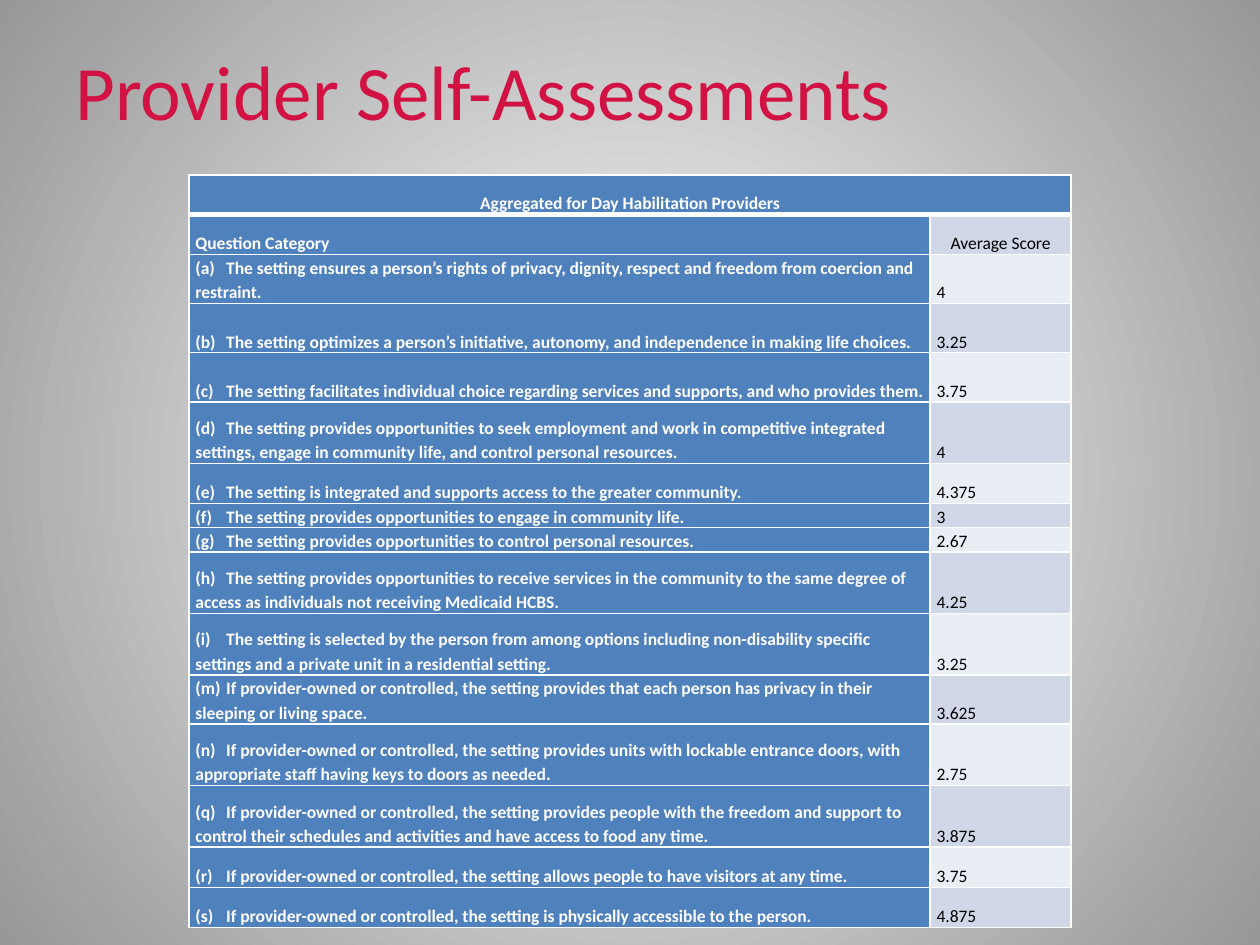
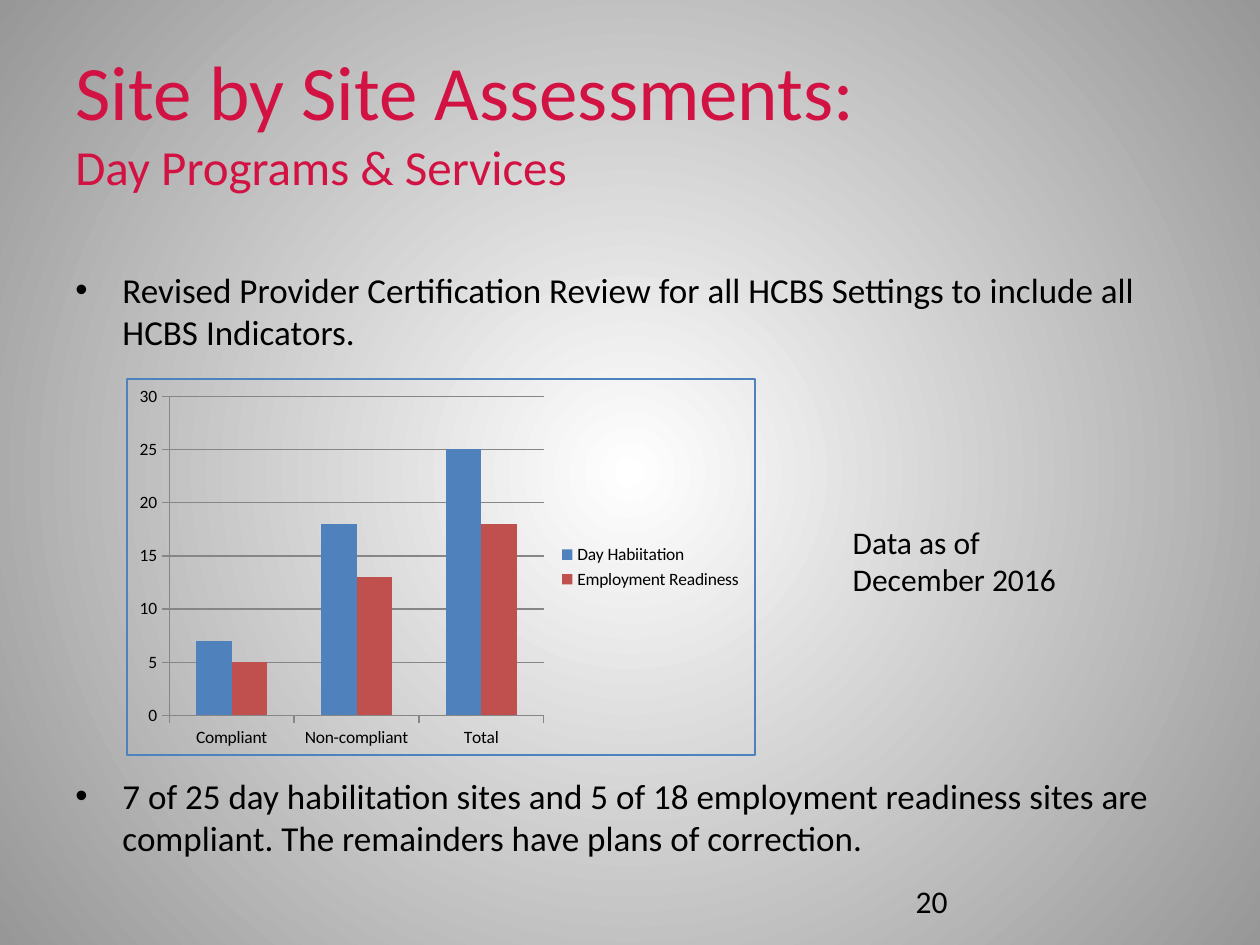
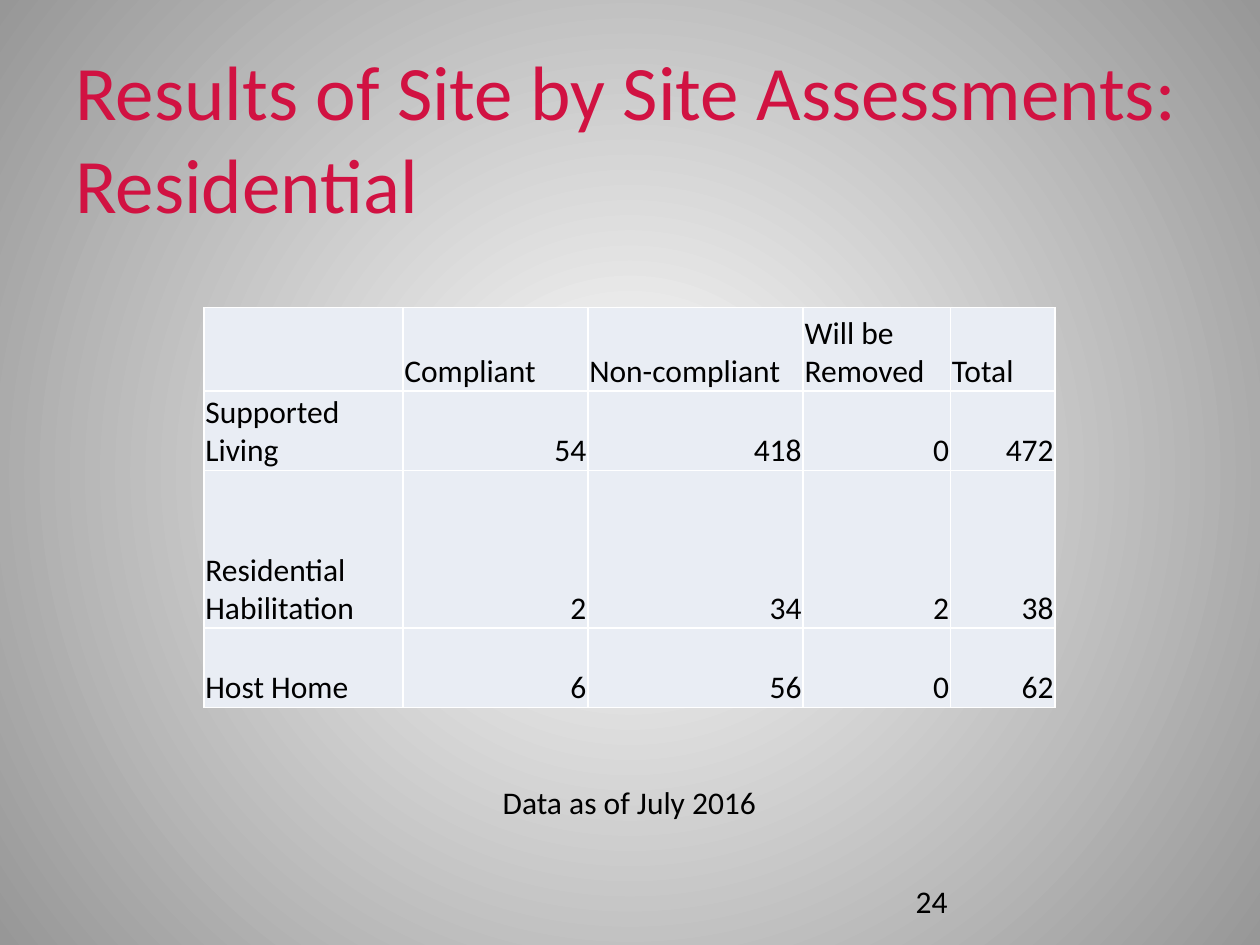
from lxml.etree import SubElement
from pptx import Presentation
from pptx.chart.data import CategoryChartData
from pptx.dml.color import RGBColor
from pptx.enum.chart import XL_CHART_TYPE, XL_LEGEND_POSITION, XL_TICK_MARK
from pptx.enum.text import MSO_ANCHOR, PP_ALIGN
from pptx.oxml import parse_xml
from pptx.oxml.ns import nsdecls, qn
from pptx.util import Cm, Pt

RED = RGBColor(0xD1, 0x12, 0x42)
BLUE = RGBColor(0x4F, 0x81, 0xBD)
BRICK = RGBColor(0xC0, 0x50, 0x4D)
BAND = RGBColor(0xD0, 0xD8, 0xE8)
PALE = RGBColor(0xE9, 0xED, 0xF4)
GREY = RGBColor(0x97, 0x97, 0x97)
RULE = RGBColor(0x86, 0x86, 0x86)
WHITE = RGBColor(0xFF, 0xFF, 0xFF)
BLACK = RGBColor(0, 0, 0)

FACE = "Calibri"
TITLE = (1.27, 0.76, 22.86, 3.18)
FOOT = (18.21, 17.65, 5.92, 1.02)

# Row height in cm, category, average score
SCORES = [
    (0.99, "(a)\tThe setting ensures a person’s rights of privacy, dignity, respect "
           "and freedom from coercion and restraint.", "4"),
    (0.99, "(b)\tThe setting optimizes a person’s initiative, autonomy, and "
           "independence in making life choices.", "3.25"),
    (0.99, "(c)\tThe setting facilitates individual choice regarding services and "
           "supports, and who provides them.", "3.75"),
    (1.24, "(d)\tThe setting provides opportunities to seek employment and work in "
           "competitive integrated settings, engage in community life, and control "
           "personal resources.", "4"),
    (0.81, "(e)\tThe setting is integrated and supports access to the greater "
           "community.", "4.375"),
    (0.48, "(f)\tThe setting provides opportunities to engage in community life.", "3"),
    (0.48, "(g)\tThe setting provides opportunities to control personal resources.",
     "2.67"),
    (1.24, "(h)\tThe setting provides opportunities to receive services in the "
           "community to the same degree of access as individuals not receiving "
           "Medicaid HCBS.", "4.25"),
    (1.24, "(i)\tThe setting is selected by the person from among options including "
           "non-disability specific settings and a private unit in a residential "
           "setting.", "3.25"),
    (0.99, "(m)\tIf provider-owned or controlled, the setting provides that each "
           "person has privacy in their sleeping or living space.", "3.625"),
    (1.24, "(n)\tIf provider-owned or controlled, the setting provides units with "
           "lockable entrance doors, with appropriate staff having keys to doors as "
           "needed.", "2.75"),
    (1.24, "(q)\tIf provider-owned or controlled, the setting provides people with "
           "the freedom and support to control their schedules and activities and "
           "have access to food any time.", "3.875"),
    (0.81, "(r)\tIf provider-owned or controlled, the setting allows people to have "
           "visitors at any time.", "3.75"),
    (0.81, "(s)\tIf provider-owned or controlled, the setting is physically "
           "accessible to the person.", "4.875"),
]

SITES = [
    ("", "Compliant", "Non-compliant", "Will be Removed", "Total"),
    ("Supported Living", "54", "418", "0", "472"),
    ("Residential Habilitation", "2", "34", "2", "38"),
    ("Host Home", "6", "56", "0", "62"),
]


def apply(item, form):
    for key, val in form.items():
        setattr(item, key, val)


def style(font, size, color=BLACK, bold=False):
    apply(font, {"name": FACE, "size": Pt(size), "bold": bold})
    font.color.rgb = color


def add_text(slide, box, text, size=18, color=BLACK, align=None):
    frame = slide.shapes.add_textbox(*map(Cm, box)).text_frame
    frame.word_wrap = True
    para = frame.paragraphs[0]
    para.alignment = align
    run = para.add_run()
    run.text = text
    style(run.font, size, color)
    return frame


def add_title(slide, text, small=None):
    para = add_text(slide, TITLE, text, 44, RED).paragraphs[0]
    if small:
        para.add_line_break()
        run = para.add_run()
        run.text = small
        style(run.font, 28, RED)


def add_list(slide, box, items, top, gap):
    """Bulleted items, the first one `top` cm down, the rest `gap` points apart."""
    frame = slide.shapes.add_textbox(*map(Cm, box)).text_frame
    apply(frame, {"word_wrap": True, "margin_top": Cm(top)})
    for num, item in enumerate(items):
        para = frame.add_paragraph() if num else frame.paragraphs[0]
        if num:
            para.space_before = Pt(gap)
        props = para._p.get_or_add_pPr()
        props.set("marL", str(Cm(0.95)))
        props.set("indent", str(-Cm(0.95)))
        SubElement(props, qn("a:buFont"), typeface="Arial")
        SubElement(props, qn("a:buChar"), char="•")
        run = para.add_run()
        run.text = item
        style(run.font, 20)


def add_grid(slide, spot, cols, rows):
    size = Cm(sum(cols)), Cm(sum(rows))
    grid = slide.shapes.add_table(
        len(rows), len(cols), *map(Cm, spot), *size).table
    for col, wide in zip(grid.columns, cols):
        col.width = Cm(wide)
    for row, high in zip(grid.rows, rows):
        row.height = Cm(high)
    return grid


def set_cell(cell, text, fill, form, size, color=BLACK, bold=False,
             align=None, space=None, edges=None):
    # Borders come before the fill
    props = cell._tc.get_or_add_tcPr()
    for side in "LRTB":
        wide = Pt((edges or {}).get(side, 1))
        props.append(parse_xml(
            f'<a:ln{side} {nsdecls("a")} w="{wide}"><a:solidFill>'
            f'<a:srgbClr val="{WHITE}"/></a:solidFill></a:ln{side}>'))
    cell.fill.solid()
    cell.fill.fore_color.rgb = fill
    apply(cell, form)
    para = cell.text_frame.paragraphs[0]
    apply(para, {"alignment": align, "line_spacing": space})
    if "\t" in text:
        tabs = SubElement(para._p.get_or_add_pPr(), qn("a:tabLst"))
        SubElement(tabs, qn("a:tab"), pos=str(Cm(0.62)), algn="l")
    if text:
        run = para.add_run()
        run.text = text
        style(run.font, size, color, bold)
    else:
        style(para.font, size)


def score_grid(slide, spot):
    form = {"vertical_anchor": MSO_ANCHOR.BOTTOM, "margin_left": Cm(0.13),
            "margin_right": Cm(0.13), "margin_top": 0, "margin_bottom": 0}
    lines = [(0.79, "Aggregated for Day Habilitation Providers", ""),
             (0.81, "Question Category", "Average Score")] + SCORES
    grid = add_grid(slide, spot, (14.94, 2.84), [line[0] for line in lines])
    for num, (_, name, score) in enumerate(lines):
        head = num == 0
        edges = {0: {"B": 3}, 1: {"T": 3}}.get(num)
        set_cell(grid.cell(num, 0), name, BLUE, form, 10, WHITE, True,
                 PP_ALIGN.CENTER if head else None, 1.15, edges)
        fill = BLUE if head else BAND if num % 2 else PALE
        set_cell(grid.cell(num, 1), score, fill, form, 10, BLACK, False,
                 PP_ALIGN.CENTER if num == 1 else None, 1.15, edges)
    grid.cell(0, 0).merge(grid.cell(0, 1))


def site_grid(slide, spot):
    form = {"vertical_anchor": MSO_ANCHOR.BOTTOM, "margin_left": Cm(0.03),
            "margin_right": Cm(0.03), "margin_top": Cm(0.03), "margin_bottom": 0}
    grid = add_grid(slide, spot, (4.01, 3.73, 4.34, 2.97, 2.11),
                    (1.68, 1.6, 3.18, 1.6))
    for row, line in enumerate(SITES):
        for col, text in enumerate(line):
            align = PP_ALIGN.RIGHT if row and col else None
            set_cell(grid.cell(row, col), text, PALE, form, 18, align=align)


def site_chart(slide, box):
    data = CategoryChartData()
    data.categories = ["Compliant", "Non-compliant", "Total"]
    data.add_series("Day Habiitation", (7, 18, 25))
    data.add_series("Employment Readiness", (5, 13, 18))
    chart = slide.shapes.add_chart(
        XL_CHART_TYPE.COLUMN_CLUSTERED, *map(Cm, box), data).chart
    apply(chart, {"has_title": False, "has_legend": True})
    style(chart.font, 10)
    apply(chart.legend, {"position": XL_LEGEND_POSITION.RIGHT,
                         "include_in_layout": False})
    # Bars
    plot = chart.plots[0]
    apply(plot, {"gap_width": 150, "overlap": 0, "vary_by_categories": False})
    for bar, color in zip(plot.series, (BLUE, BRICK)):
        bar.format.fill.solid()
        bar.format.fill.fore_color.rgb = color
    # Axes
    axis = chart.value_axis
    apply(axis, {"minimum_scale": 0, "maximum_scale": 30, "major_unit": 5,
                 "has_major_gridlines": True})
    for part in (axis, chart.category_axis):
        part.major_tick_mark = XL_TICK_MARK.OUTSIDE
    for part in (axis, axis.major_gridlines, chart.category_axis):
        part.format.line.color.rgb = RULE
        part.format.line.width = Pt(0.75)
    # Frame
    chart.element.find(qn("c:chart")).addnext(parse_xml(
        f'<c:spPr {nsdecls("c", "a")}><a:noFill/><a:ln w="{Pt(1.25)}">'
        f'<a:solidFill><a:srgbClr val="{BLUE}"/></a:solidFill></a:ln></c:spPr>'))


def set_back(master):
    """Round gradient from white at the centre to grey."""
    fill = master.background.fill
    fill.gradient()
    for stop, color in zip(fill.gradient_stops, (WHITE, GREY)):
        stop.color.rgb = color
    grad = next(master.element.iter(qn("a:gradFill")))
    for line in grad.findall(qn("a:lin")):
        grad.remove(line)
    ring = SubElement(grad, qn("a:path"), {"path": "circle"})
    SubElement(ring, qn("a:fillToRect"), dict.fromkeys("ltrb", "50000"))


def score_slide(slide):
    add_title(slide, "Provider Self-Assessments")
    score_grid(slide, (3.81, 3.53))


def day_slide(slide):
    add_title(slide, "Site by Site Assessments:", "Day Programs & Services")
    add_list(slide, (1.27, 4.24, 22.86, 12.57), [
        "Revised Provider Certification Review for all HCBS Settings to include "
        "all HCBS Indicators.",
        "7 of 25 day habilitation sites and 5 of 18 employment readiness sites are "
        "compliant. The remainders have plans of correction."], 1.17, 241)
    add_text(slide, FOOT, "20")
    site_chart(slide, (2.54, 7.62, 12.7, 7.62))
    add_text(slide, (16.94, 10.41, 4.88, 1.8), "Data as of December 2016")


def home_slide(slide):
    add_title(slide, "Results of Site by Site Assessments: Residential")
    add_text(slide, FOOT, "24")
    site_grid(slide, (4.11, 6.2))
    add_text(slide, (4.65, 15.67, 16.08, 1.02), "Data as of July 2016",
             align=PP_ALIGN.CENTER)


def main():
    deck = Presentation()
    apply(deck, {"slide_width": Cm(25.4), "slide_height": Cm(19.05)})
    set_back(deck.slide_master)
    for build in (score_slide, day_slide, home_slide):
        build(deck.slides.add_slide(deck.slide_layouts[6]))
    deck.save("out.pptx")


if __name__ == "__main__":
    main()
